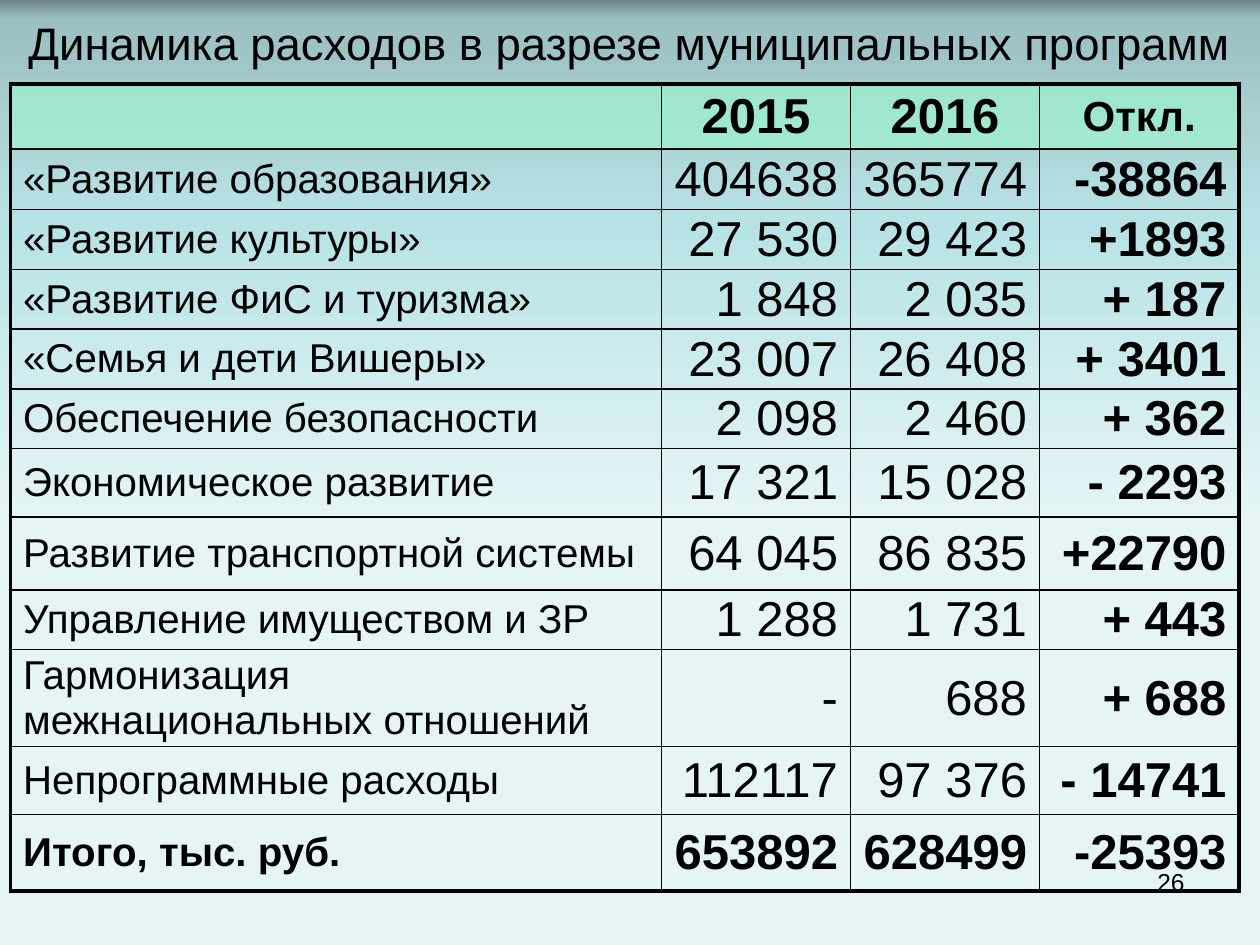
"""Build the slide on municipal programme spending in 2015 and 2016."""
from typing import NamedTuple

from lxml import etree
from pptx import Presentation
from pptx.dml.color import RGBColor
from pptx.enum.text import MSO_ANCHOR, PP_ALIGN
from pptx.oxml.ns import qn
from pptx.util import Emu, Inches, Pt

LEFT, CENTER, RIGHT = PP_ALIGN.LEFT, PP_ALIGN.CENTER, PP_ALIGN.RIGHT
TOP, MIDDLE = MSO_ANCHOR.TOP, MSO_ANCHOR.MIDDLE

BLACK = RGBColor(0x00, 0x00, 0x00)
MINT = RGBColor(0x99, 0xFF, 0xCC)
SKY = (
    (0, RGBColor(0x6D, 0x86, 0x88)),
    (2, RGBColor(0x9B, 0xBF, 0xC2)),
    (24, RGBColor(0xB8, 0xE3, 0xE6)),
    (55, RGBColor(0xE5, 0xF5, 0xF6)),
)

FONT = "Arial"
SLIDE_WIDTH, SLIDE_HEIGHT = Inches(10), Inches(7.5)
GRID = SLIDE_WIDTH // 120
THIN, THICK = Pt(1), Pt(2.25)
NAME_SIZE, NUMBER_SIZE, DEVIATION_HEAD_SIZE = 23, 28, 24
COLUMN_SPANS = (62, 18, 18, 19)
HEADER_SPAN = 6.2
ROW_SPAN = 5.7


class Area(NamedTuple):
    """Place on the slide in grid units."""

    left: float
    top: float
    width: float
    height: float

    def lengths(self) -> tuple:
        """Return left, top, width and height as lengths."""
        return tuple(span(units) for units in self)


class Style(NamedTuple):
    """Look of one run and its paragraph."""

    size: float
    align: PP_ALIGN = LEFT
    bold: bool = False


class Programme(NamedTuple):
    """One table row with its height in grid units."""

    name: str
    year_2015: str
    year_2016: str
    deviation: str
    height: float = ROW_SPAN
    total: bool = False


TITLE_AREA = Area(1, 2, 118, 4)
NUMBER_AREA = Area(86, 82, 28, 6.25)
TABLE_AREA = Area(1, 8, 117, 76.6)

HEADINGS = (
    ("2015", NUMBER_SIZE),
    ("2016", NUMBER_SIZE),
    ("Откл.", DEVIATION_HEAD_SIZE),
)
PROGRAMMES = (
    Programme("«Развитие образования»", "404638", "365774", "-38864", 5.75),
    Programme("«Развитие культуры»", "27 530", "29 423", "+1893"),
    Programme("«Развитие ФиС и туризма»", "1 848", "2 035", "+ 187"),
    Programme("«Семья и дети Вишеры»", "23 007", "26 408", "+ 3401"),
    Programme("Обеспечение безопасности", "2 098", "2 460", "+ 362"),
    Programme("Экономическое развитие", "17 321", "15 028", "- 2293", 6.5),
    Programme("Развитие транспортной системы", "64 045", "86 835", "+22790", 6.95),
    Programme("Управление имуществом и ЗР", "1 288", "1 731", "+ 443"),
    Programme("Гармонизация межнациональных отношений", "-", "688", "+ 688", 9.05),
    Programme("Непрограммные расходы", "112117", "97 376", "- 14741", 6.5),
    Programme("Итого, тыс. руб.", "653892", "628499", "-25393", 7.3, True),
)


def span(units: float) -> Emu:
    """Turn grid units into a length."""
    return Emu(round(units * GRID))


def write(frame, text: str, style: Style) -> None:
    """Put one styled run into a text frame."""
    paragraph = frame.paragraphs[0]
    paragraph.alignment = style.align
    run = paragraph.add_run()
    run.text = text
    run.font.name = FONT
    run.font.size = Pt(style.size)
    run.font.bold = style.bold
    run.font.color.rgb = BLACK


def add_text(slide, area: Area, text: str, style: Style, anchor: MSO_ANCHOR) -> None:
    """Add a wrapped text box."""
    frame = slide.shapes.add_textbox(*area.lengths()).text_frame
    frame.word_wrap = True
    frame.vertical_anchor = anchor
    write(frame, text, style)


def paint_background(slide) -> None:
    """Fill the background with the vertical gradient."""
    fill = slide.background.fill
    fill.gradient()
    fill.gradient_angle = 270
    stops = next(slide.element.iter(qn("a:gsLst")))
    for stop in list(stops):
        stops.remove(stop)
    for position, colour in SKY:
        stop = etree.SubElement(stops, qn("a:gs"), pos=str(position * 1000))
        etree.SubElement(stop, qn("a:srgbClr"), val=str(colour))


def border_cell(cell, widths: dict) -> None:
    """Draw the four borders of a cell."""
    properties = cell._tc.get_or_add_tcPr()
    for index, (side, width) in enumerate(widths.items()):
        line = etree.Element(qn(f"a:ln{side}"), w=str(int(width)))
        solid = etree.SubElement(line, qn("a:solidFill"))
        etree.SubElement(solid, qn("a:srgbClr"), val=str(BLACK))
        properties.insert(index, line)


def tint_header(cell) -> None:
    """Give a heading cell its half transparent fill and no side margins."""
    cell.fill.solid()
    cell.fill.fore_color.rgb = MINT
    colour = next(cell._tc.tcPr.iter(qn("a:srgbClr")))
    etree.SubElement(colour, qn("a:alpha"), val="50000")
    cell.margin_left = cell.margin_right = 0


def fill_programme(table, row: int, programme: Programme) -> None:
    """Write one programme into its table row."""
    entries = (
        (programme.name, Style(NAME_SIZE, LEFT, programme.total)),
        (programme.year_2015, Style(NUMBER_SIZE, RIGHT, programme.total)),
        (programme.year_2016, Style(NUMBER_SIZE, RIGHT, programme.total)),
        (programme.deviation, Style(NUMBER_SIZE, RIGHT, True)),
    )
    for column, (text, style) in enumerate(entries):
        cell = table.cell(row, column)
        cell.fill.background()
        cell.margin_left = cell.margin_right = Inches(0.1)
        write(cell.text_frame, text, style)


def add_spending_table(slide) -> None:
    """Add the table of spending by programme."""
    last_row, last_column = len(PROGRAMMES), len(COLUMN_SPANS) - 1
    holder = slide.shapes.add_table(last_row + 1, last_column + 1, *TABLE_AREA.lengths())
    table = holder.table
    table.first_row = table.horz_banding = False
    for column, units in zip(table.columns, COLUMN_SPANS):
        column.width = span(units)
    table.rows[0].height = span(HEADER_SPAN)
    for column in range(last_column + 1):
        tint_header(table.cell(0, column))
    for column, (heading, size) in enumerate(HEADINGS, 1):
        write(table.cell(0, column).text_frame, heading, Style(size, CENTER, True))
    for row, programme in enumerate(PROGRAMMES, 1):
        table.rows[row].height = span(programme.height)
        fill_programme(table, row, programme)
    for index, cell in enumerate(table.iter_cells()):
        row, column = divmod(index, last_column + 1)
        cell.vertical_anchor = MIDDLE
        cell.margin_top = cell.margin_bottom = 0
        border_cell(cell, {
            "L": THICK if column == 0 else THIN,
            "R": THICK if column == last_column else THIN,
            "T": THICK if row == 0 else THIN,
            "B": THICK if row == last_row else THIN,
        })


def main() -> None:
    """Build and save the presentation."""
    deck = Presentation()
    deck.slide_width, deck.slide_height = SLIDE_WIDTH, SLIDE_HEIGHT
    slide = deck.slides.add_slide(deck.slide_layouts[6])
    paint_background(slide)
    add_text(slide, NUMBER_AREA, "26", Style(14, RIGHT), TOP)
    add_text(slide, TITLE_AREA, "Динамика расходов в разрезе муниципальных программ",
             Style(26, CENTER), MIDDLE)
    add_spending_table(slide)
    deck.save("out.pptx")


if __name__ == "__main__":
    main()
